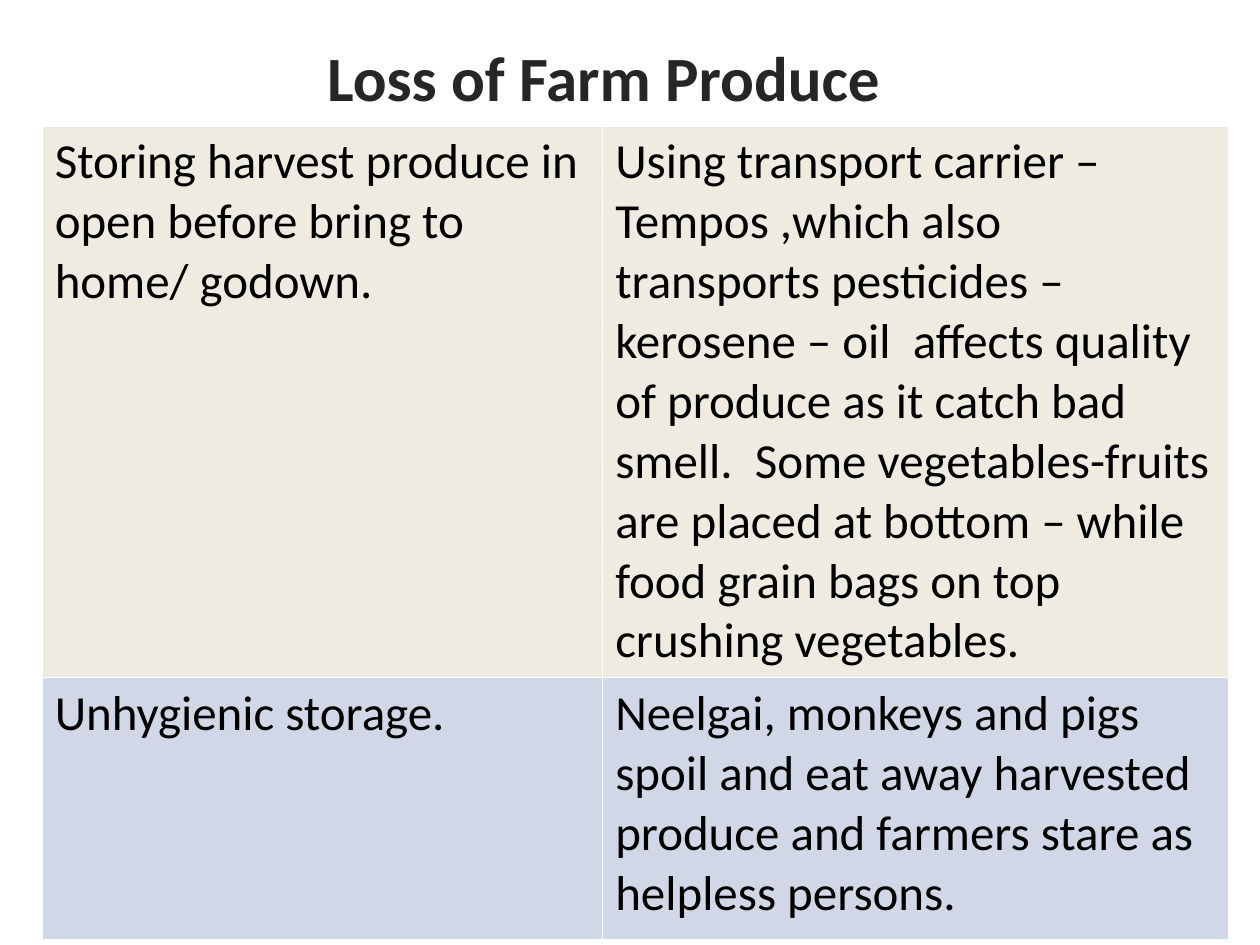
from lxml import etree
from pptx import Presentation
from pptx.dml.color import RGBColor
from pptx.enum.text import MSO_ANCHOR, MSO_AUTO_SIZE, PP_ALIGN
from pptx.oxml.ns import qn
from pptx.util import Cm, Pt

CENTER = PP_ALIGN.CENTER
TOP = MSO_ANCHOR.TOP
NO_FIT = MSO_AUTO_SIZE.NONE
BLACK = RGBColor(0x00, 0x00, 0x00)
DARK = RGBColor(0x26, 0x26, 0x26)
WHITE = RGBColor(0xFF, 0xFF, 0xFF)
CREAM = RGBColor(0xEE, 0xEC, 0xE1)
BLUE = RGBColor(0xD0, 0xD8, 0xE8)
FONT = "Calibri"


def add_run(para, text, size, color, bold=False):
    run = para.add_run()
    run.text = text
    run.font.name = FONT
    run.font.size = Pt(size)
    run.font.bold = bold
    run.font.color.rgb = color


def add_edges(cell, color, width):
    props = cell._tc.get_or_add_tcPr()
    for side in ("lnL", "lnR", "lnT", "lnB"):
        line = etree.SubElement(props, qn(f"a:{side}"), w=str(Pt(width)))
        fill = etree.SubElement(line, qn("a:solidFill"))
        etree.SubElement(fill, qn("a:srgbClr"), val=str(color))


prs = Presentation()
prs.slide_width = Cm(25.4)
prs.slide_height = Cm(19.05)
slide = prs.slides.add_slide(prs.slide_layouts[5])

title = slide.shapes.title
title.left, title.top = Cm(1.27), Cm(0.64)
title.width, title.height = Cm(21.8), Cm(1.8)
frame = title.text_frame
frame.word_wrap = True
frame.auto_size = NO_FIT
frame.vertical_anchor = TOP
para = frame.paragraphs[0]
para.alignment = CENTER
add_run(para, "Loss of Farm Produce", 36, DARK, True)

rows = [
    (10.6, CREAM, [
        "Storing harvest produce in open before bring to home/ godown.",
        "Using transport carrier – Tempos ,which also transports pesticides – "
        "kerosene – oil  affects quality of produce as it catch bad smell.  "
        "Some vegetables-fruits are placed at bottom – while food grain bags "
        "on top crushing vegetables.",
    ]),
    (5.28, BLUE, [
        "Unhygienic storage.",
        "Neelgai, monkeys and pigs spoil and eat away harvested produce and "
        "farmers stare as helpless persons.",
    ]),
]
widths = [11.3, 12.62]
high = sum(row[0] for row in rows)
table = slide.shapes.add_table(
    len(rows), len(widths), Cm(0.85), Cm(2.54), Cm(sum(widths)), Cm(high)
).table
table.first_row = False
table.horz_banding = False
for col, width in zip(table.columns, widths):
    col.width = Cm(width)

for r, (height, shade, texts) in enumerate(rows):
    table.rows[r].height = Cm(height)
    for c, text in enumerate(texts):
        cell = table.cell(r, c)
        add_edges(cell, WHITE, 1)
        cell.fill.solid()
        cell.fill.fore_color.rgb = shade
        add_run(cell.text_frame.paragraphs[0], text, 28, BLACK)

prs.save("out.pptx")
